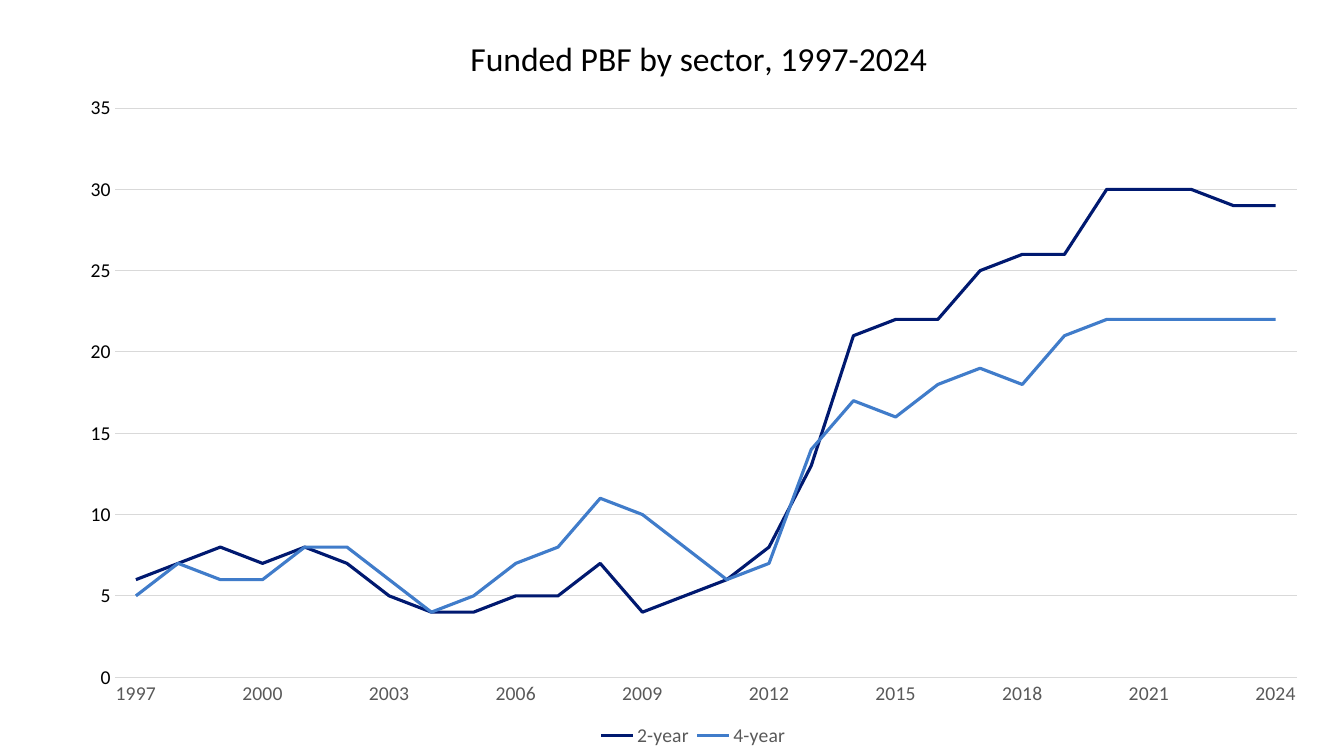
from lxml import etree
from pptx import Presentation
from pptx.chart.data import CategoryChartData
from pptx.dml.color import RGBColor
from pptx.enum.chart import XL_CHART_TYPE, XL_LEGEND_POSITION, XL_MARKER_STYLE, XL_TICK_MARK
from pptx.oxml.ns import qn
from pptx.util import Inches, Pt

LINE = XL_CHART_TYPE.LINE
BOTTOM = XL_LEGEND_POSITION.BOTTOM
NO_MARKER = XL_MARKER_STYLE.NONE
NO_TICK = XL_TICK_MARK.NONE

# Content
TITLE = "Funded PBF by sector, 1997-2024"
FIRST_YEAR, LAST_YEAR, LABEL_STEP = 1997, 2024, 3
SECTORS = {
    "2-year": [6, 7, 8, 7, 8, 7, 5, 4, 4, 5, 5, 7, 4, 5,
               6, 8, 13, 21, 22, 22, 25, 26, 26, 30, 30, 30, 29, 29],
    "4-year": [5, 7, 6, 6, 8, 8, 6, 4, 5, 7, 8, 11, 10, 8,
               6, 7, 14, 17, 16, 18, 19, 18, 21, 22, 22, 22, 22, 22],
}

# Look
THEME = {
    "font": "Calibri",
    "text": "000000", "muted": "595959", "grid": "D9D9D9",
    "sectors": {"2-year": "001970", "4-year": "407CCA"},
    "title_size": 24, "label_size": 14, "base_size": 10,
    "grid_width": 0.75, "sector_width": 2.25,
}
CHART_BOX = (0.64, 0, 12.47, 7.5)
# Fractions of the chart box
PLOT_LAYOUT = {"x": 0.04, "y": 0.143, "w": 0.94, "h": 0.753}
TITLE_LAYOUT = {"x": 0.318, "y": 0.04}
LEGEND_LAYOUT = {"x": 0.42, "y": 0.965, "w": 0.16, "h": 0.04}


def style_font(font, size, color):
    values = {"name": THEME["font"], "size": Pt(size), "bold": False}
    for key, value in values.items():
        setattr(font, key, value)
    font.color.rgb = RGBColor.from_string(color)


def style_line(line, color, width):
    line.color.rgb = RGBColor.from_string(color)
    line.width = Pt(width)


def place(part, fractions, after=None, inner=False):
    """Fix a chart part at fractions of the chart box."""
    for old in part.findall(qn("c:layout")):
        part.remove(old)
    layout = etree.Element(qn("c:layout"))
    manual = etree.SubElement(layout, qn("c:manualLayout"))
    settings = {"layoutTarget": "inner"} if inner else {}
    settings.update(xMode="edge", yMode="edge", **fractions)
    for key, value in settings.items():
        etree.SubElement(manual, qn(f"c:{key}")).set("val", str(value))
    part.insert(0 if after is None else part.index(part.find(qn(after))) + 1, layout)


prs = Presentation()
prs.slide_width, prs.slide_height = Inches(13.33), Inches(7.5)
slide = prs.slides.add_slide(prs.slide_layouts[6])

# Data: every third year carries a label
data = CategoryChartData()
data.categories = [str(year) if (year - FIRST_YEAR) % LABEL_STEP == 0 else ""
                   for year in range(FIRST_YEAR, LAST_YEAR + 1)]
for sector, counts in SECTORS.items():
    data.add_series(sector, counts)
chart = slide.shapes.add_chart(LINE, *map(Inches, CHART_BOX), data).chart
style_font(chart.font, THEME["base_size"], THEME["text"])

# Title
chart.has_title = True
heading = chart.chart_title
heading.include_in_layout = False
heading.text_frame.text = TITLE
style_font(heading.text_frame.paragraphs[0].runs[0].font, THEME["title_size"], THEME["text"])
place(heading._element, TITLE_LAYOUT, after="c:tx")

# Axes
years, funded = chart.category_axis, chart.value_axis
for axis, color in ((years, THEME["muted"]), (funded, THEME["text"])):
    axis.major_tick_mark = axis.minor_tick_mark = NO_TICK
    style_font(axis.tick_labels.font, THEME["label_size"], color)
style_line(years.format.line, THEME["grid"], THEME["grid_width"])
funded.format.line.fill.background()
for key, value in {"minimum_scale": 0, "maximum_scale": 35, "major_unit": 5}.items():
    setattr(funded, key, value)
style_line(funded.major_gridlines.format.line, THEME["grid"], THEME["grid_width"])

# Sector lines
plot = chart.plots[0]
plot.vary_by_categories = False
for sector in plot.series:
    sector.smooth = False
    sector.marker.style = NO_MARKER
    style_line(sector.format.line, THEME["sectors"][sector.name], THEME["sector_width"])
place(plot._element.getparent(), PLOT_LAYOUT, inner=True)

# Legend
chart.has_legend = True
legend = chart.legend
legend.position = BOTTOM
legend.include_in_layout = False
style_font(legend.font, THEME["label_size"], THEME["muted"])
place(legend._element, LEGEND_LAYOUT, after="c:legendPos")

prs.save("out.pptx")
